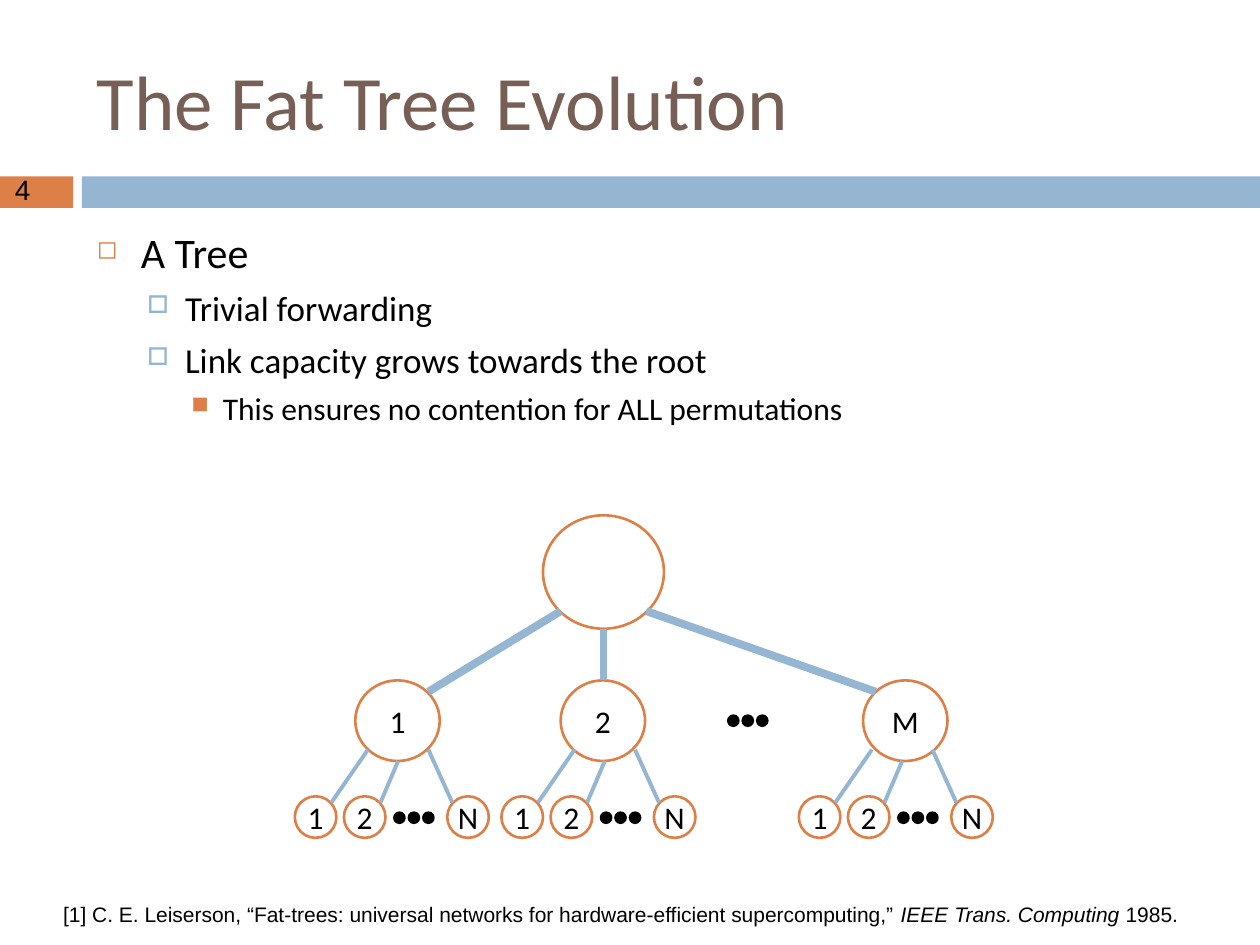
from dataclasses import dataclass

from lxml import etree
from pptx import Presentation
from pptx import util as u
from pptx.dml.color import RGBColor
from pptx.enum import shapes, text
from pptx.oxml.ns import qn

OVAL = shapes.MSO_SHAPE.OVAL
RECT = shapes.MSO_SHAPE.RECTANGLE


@dataclass(frozen=True)
class Theme:
    brown: str = "775F55"
    orange: str = "DD8047"
    blue: str = "94B6D2"
    black: str = "000000"
    white: str = "FFFFFF"
    head: int = 44
    levels: tuple = (24, 20, 18)
    label: int = 18
    page: int = 16
    note: int = 12
    sans: str = "Calibri"
    arial: str = "Arial"


T = Theme()

# Per level: indent, hanging, space before, mark, mark colour, mark size %
BULLETS = (
    (0.35, 0.35, 7, "◻", T.orange, 60),
    (0.7, 0.3, 5.5, "□", T.blue, 70),
    (1, 0.25, 5, "■", T.orange, 75),
)
POINTS = (
    (0, "A Tree"),
    (1, "Trivial forwarding"),
    (1, "Link capacity grows towards the root"),
    (2, "This ensures no contention for ALL permutations"),
)
# Per branch: label, left of its node, left of its first leaf
BRANCHES = (("1", 2.82, 2.34), ("2", 4.45, 3.98), ("M", 6.85, 6.34))
LEAVES = (("1", 0), ("2", 0.39), ("N", 1.21))
# Per link: top x, top y, bottom x, measured from the first leaf
TWIGS = ((0.58, 5.95, 0.29), (0.82, 6.04, 0.68), (1.06, 5.95, 1.25))


def style(para, size, font=T.sans, color=T.black):
    for run in para.runs:
        run.font.size = u.Pt(size)
        run.font.name = font
        run.font.color.rgb = RGBColor.from_string(color)


def add_box(slide, x, y, w, h):
    box = slide.shapes.add_textbox(*map(u.Inches, (x, y, w, h)))
    box.text_frame.word_wrap = True
    return box.text_frame


def add_form(slide, kind, x, y, w, h, fill, line=None):
    form = slide.shapes.add_shape(kind, *map(u.Inches, (x, y, w, h)))
    form.shadow.inherit = False
    form.fill.solid()
    form.fill.fore_color.rgb = RGBColor.from_string(fill)
    if line:
        form.line.color.rgb = RGBColor.from_string(line)
        form.line.width = u.Pt(1.5)
    else:
        form.line.fill.background()
    return form


def add_node(slide, x, y, w, h, label=""):
    node = add_form(slide, OVAL, x, y, w, h, T.white, T.orange)
    if label:
        frame = node.text_frame
        frame.text = label
        frame.word_wrap = False
        frame.vertical_anchor = text.MSO_ANCHOR.MIDDLE
        frame.paragraphs[0].alignment = text.PP_ALIGN.CENTER
        style(frame.paragraphs[0], T.label)


def add_link(slide, x1, y1, x2, y2, width):
    link = slide.shapes.add_connector(
        shapes.MSO_CONNECTOR.STRAIGHT, *map(u.Inches, (x1, y1, x2, y2)))
    link.line.color.rgb = RGBColor.from_string(T.blue)
    link.line.width = u.Pt(width)
    etree.SubElement(link.element.spPr, qn("a:effectLst"))


def add_dots(slide, x, y):
    for i in range(3):
        add_form(slide, OVAL, x + i * 0.115, y, 0.08, 0.08, T.black, T.black)


def set_mark(para, level):
    indent, hang, gap, mark, color, size = BULLETS[level]
    para.level = level
    para.space_before = u.Pt(gap)
    props = para._p.get_or_add_pPr()
    props.set("marL", str(u.Inches(indent)))
    props.set("indent", str(-u.Inches(hang)))
    tint = etree.SubElement(props, qn("a:buClr"))
    etree.SubElement(tint, qn("a:srgbClr"), val=color)
    etree.SubElement(props, qn("a:buSzPct"), val=str(size * 1000))
    etree.SubElement(props, qn("a:buChar"), char=mark)


def add_frame(slide):
    # Band, page number and title
    add_form(slide, RECT, 0, 1.4, 0.58, 0.25, T.orange)
    add_form(slide, RECT, 0.65, 1.4, 9.35, 0.25, T.blue)
    page = add_box(slide, 0.02, 1.32, 0.48, 0.37)
    page.text = "4"
    style(page.paragraphs[0], T.page, T.arial)
    head = add_box(slide, 0.67, 0.25, 8.92, 1.08)
    head.text = "The Fat Tree Evolution"
    head.vertical_anchor = text.MSO_ANCHOR.MIDDLE
    style(head.paragraphs[0], T.head, color=T.brown)


def add_points(slide):
    body = add_box(slide, 0.67, 1.75, 8.92, 4.92)
    body.text = "\n".join(words for _, words in POINTS)
    for para, (level, _) in zip(body.paragraphs, POINTS):
        set_mark(para, level)
        style(para, T.levels[level])


def add_branch(slide, label, x, base):
    add_node(slide, x, 5.4, 0.67, 0.64, label)
    for name, step in LEAVES:
        add_node(slide, base + step, 6.32, 0.33, 0.33, name)
    for top, y, end in TWIGS:
        add_link(slide, base + top, y, base + end, 6.37, 2.25)
    add_dots(slide, base + 0.79, 6.45)


def add_tree(slide):
    # Root with thick links, then one subtree per branch
    add_node(slide, 4.31, 4.09, 0.96, 0.9)
    for label, x, base in BRANCHES:
        add_branch(slide, label, x, base)
    add_link(slide, 4.45, 4.85, 3.4, 5.49, 4.5)
    add_link(slide, 4.79, 4.99, 4.79, 5.4, 4.5)
    add_link(slide, 5.13, 4.85, 6.95, 5.49, 4.5)
    add_dots(slide, 5.78, 5.68)


def add_note(slide):
    para = add_box(slide, 0.2, 7.11, 9.45, 0.3).paragraphs[0]
    para.alignment = text.PP_ALIGN.CENTER
    for words, slant in (
        ("[1] C. E. Leiserson, “Fat-trees: universal networks for "
         "hardware-efficient supercomputing,” ", False),
        ("IEEE Trans. Computing ", True),
        ("1985.", False),
    ):
        run = para.add_run()
        run.text = words
        run.font.italic = slant
    style(para, T.note, T.arial)


def main():
    deck = Presentation()
    deck.slide_width, deck.slide_height = u.Inches(10), u.Inches(7.5)
    slide = deck.slides.add_slide(deck.slide_layouts[6])
    add_frame(slide)
    add_points(slide)
    add_tree(slide)
    add_note(slide)
    deck.save("out.pptx")


if __name__ == "__main__":
    main()
